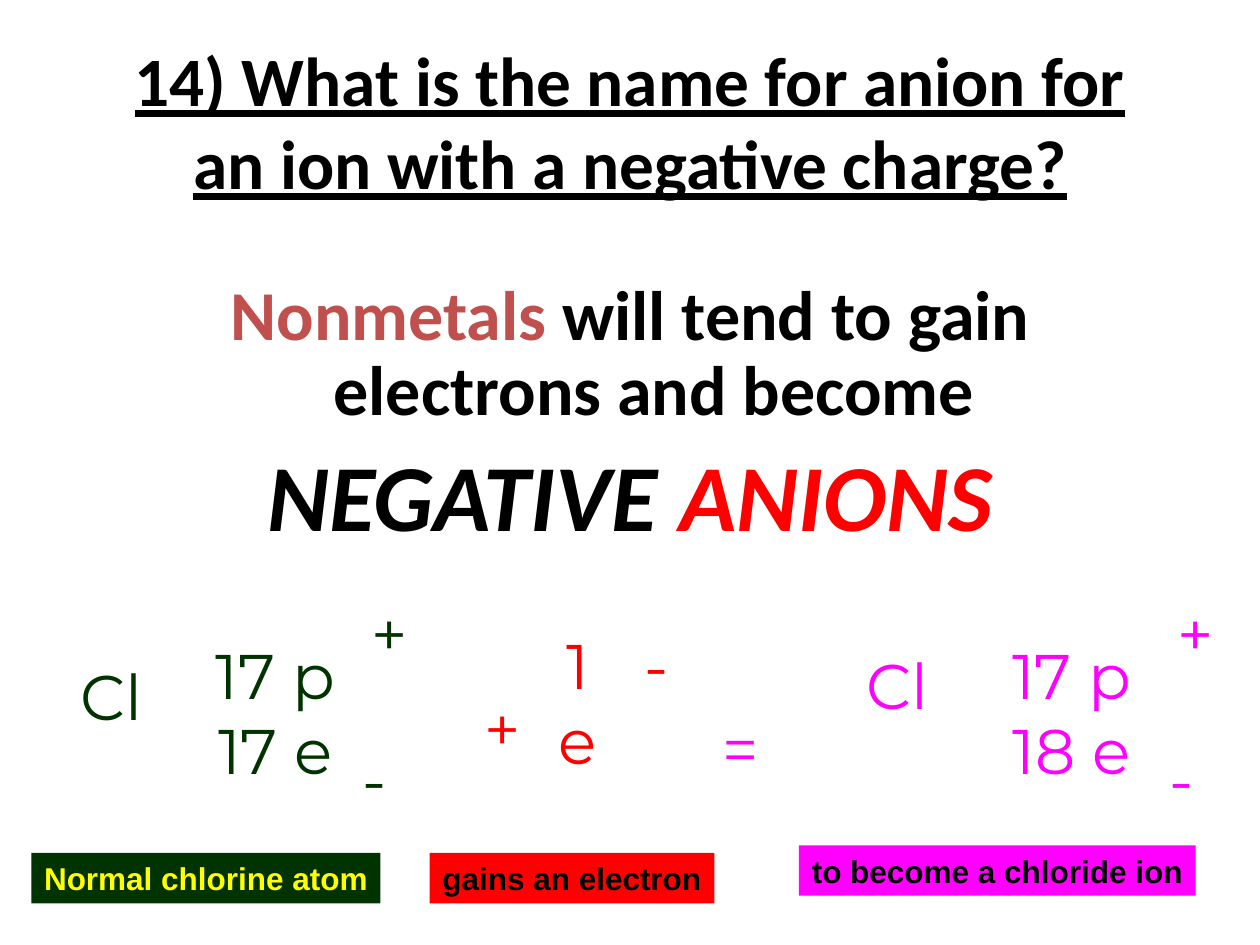
"""Build a slide on how nonmetals gain electrons and become anions."""
import pptx
import pptx.util
import pptx.dml.color
import pptx.enum.shapes
import pptx.enum.text

Inches, Pt = pptx.util.Inches, pptx.util.Pt

COLORS = {"black": "000000", "brick": "C0504D", "red": "FF0000",
          "green": "003300", "yellow": "FFFF00", "magenta": "FF00FF"}

TITLE = "14) What is the name for anion for an ion with a negative charge?"
STATEMENT = [
    (40, False, [("Nonmetals", "brick"), (" will tend to gain electrons and become", "black")]),
    (54, True, [("NEGATIVE ", "black"), ("ANIONS", "red")]),
]
STEPS = [
    {"color": "green",
     "symbols": [(["17 p", "17 e"], (1.6, 5, 1.17, 1.42)),
                 (["+"], (2.85, 4.67, 0.25, 0.5)),
                 (["-"], (2.76, 5.83, 0.42, 0.21)),
                 (["Cl"], (0.26, 5.17, 1.25, 1.38))],
     "caption": ("Normal chlorine atom", "yellow", (0.25, 6.77, 2.77, 0.4))},
    {"color": "red",
     "symbols": [(["+"], (3.75, 5.42, 0.33, 0.42)),
                 (["1e"], (4.25, 4.92, 0.67, 1.42)),
                 (["-"], (5, 4.92, 0.42, 0.21))],
     "caption": ("gains an electron", "black", (3.41, 6.77, 2.26, 0.4))},
    {"color": "magenta",
     "symbols": [(["="], (5.5, 5.58, 0.75, 0.38)),
                 (["Cl"], (6.5, 5.08, 1.25, 1.38)),
                 (["17 p", "18 e"], (7.92, 5, 1.17, 1.42)),
                 (["+"], (9.25, 4.67, 0.25, 0.5)),
                 (["-"], (9.17, 5.83, 0.42, 0.21))],
     "caption": ("to become a chloride ion", "black", (6.34, 6.71, 3.15, 0.4))},
]


def rgb(color):
    return pptx.dml.color.RGBColor.from_string(COLORS[color])


def add_run(paragraph, words, font_name, size, color, bold=False):
    paragraph.alignment = pptx.enum.text.PP_ALIGN.CENTER
    run = paragraph.add_run()
    run.text = words
    run.font.name = font_name
    run.font.size = Pt(size)
    run.font.bold = bold
    run.font.color.rgb = rgb(color)
    return run


def add_lines(frame, lines, *style):
    for index, line in enumerate(lines):
        paragraph = frame.add_paragraph() if index else frame.paragraphs[0]
        add_run(paragraph, line, *style)


def add_title(slide):
    frame = slide.shapes.add_textbox(*map(Inches, (0.75, 0.33, 8.5, 1.25))).text_frame
    frame.word_wrap = True
    frame.vertical_anchor = pptx.enum.text.MSO_ANCHOR.MIDDLE
    add_run(frame.paragraphs[0], TITLE, "Calibri", 39.6, "black", True).font.underline = True


def add_statement(slide):
    frame = slide.shapes.add_textbox(*map(Inches, (0.75, 2.17, 8.5, 2.5))).text_frame
    frame.word_wrap = True
    for index, (size, italic, parts) in enumerate(STATEMENT):
        paragraph = frame.add_paragraph() if index else frame.paragraphs[0]
        paragraph.line_spacing = 0.9
        paragraph.space_before = Pt(0.2 * size)
        properties = paragraph._p.get_or_add_pPr()
        properties.set("marL", str(Inches(0.38)))
        properties.set("indent", str(-Inches(0.38)))
        for words, color in parts:
            add_run(paragraph, words, "Calibri", size, color, True).font.italic = italic


def add_step(slide, step):
    group = slide.shapes.add_group_shape()
    for lines, place in step["symbols"]:
        frame = group.shapes.add_textbox(*map(Inches, place)).text_frame
        frame.word_wrap = False
        add_lines(frame, lines, "Montserrat", 36, step["color"])
    words, color, place = step["caption"]
    caption = group.shapes.add_shape(pptx.enum.shapes.MSO_SHAPE.RECTANGLE, *map(Inches, place))
    caption.shadow.inherit = False
    caption.fill.solid()
    caption.fill.fore_color.rgb = rgb(step["color"])
    caption.line.fill.background()
    frame = caption.text_frame
    frame.word_wrap = False
    frame.auto_size = pptx.enum.text.MSO_AUTO_SIZE.SHAPE_TO_FIT_TEXT
    frame.vertical_anchor = pptx.enum.text.MSO_ANCHOR.TOP
    add_lines(frame, [words], "Arial", 18, color, True)


def main():
    deck = pptx.Presentation()
    deck.slide_width, deck.slide_height = Inches(10), Inches(7.5)
    slide = deck.slides.add_slide(deck.slide_layouts[6])
    add_title(slide)
    add_statement(slide)
    for step in STEPS:
        add_step(slide, step)
    deck.save("out.pptx")


if __name__ == "__main__":
    main()
